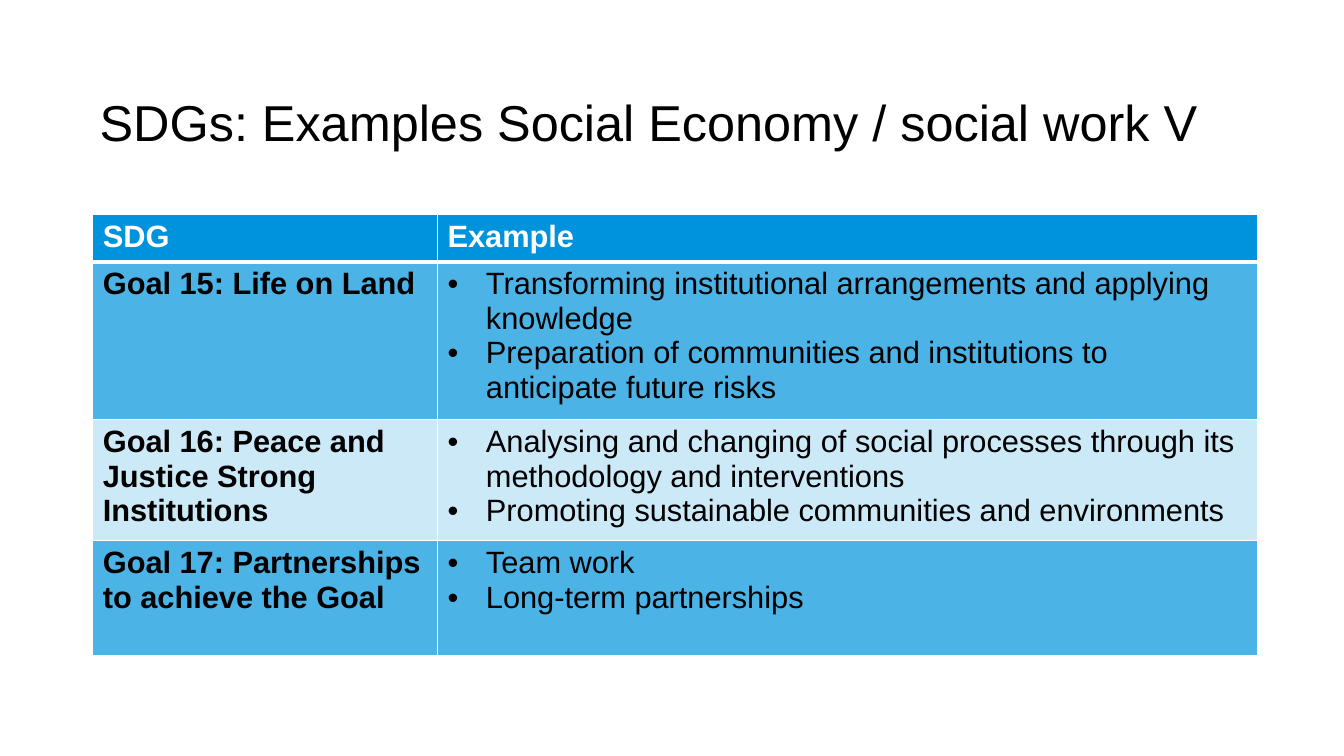
from lxml import etree
from pptx import Presentation
from pptx.dml.color import RGBColor
from pptx.enum import text as t
from pptx.oxml import ns
from pptx.util import Inches, Pt

BLACK = RGBColor(0x00, 0x00, 0x00)
WHITE = RGBColor(0xFF, 0xFF, 0xFF)
BLUE = RGBColor(0x00, 0x93, 0xDD)
FONT = "Arial"

TITLE = "SDGs: Examples Social Economy / social work V"
HEADINGS = ("SDG", "Example")
GOALS = [
    ("Goal 15: Life on Land",
     ["Transforming institutional arrangements and applying knowledge",
      "Preparation of communities and institutions to anticipate future risks"]),
    ("Goal 16: Peace and Justice Strong Institutions",
     ["Analysing and changing of social processes through its methodology and interventions",
      "Promoting sustainable communities and environments"]),
    ("Goal 17: Partnerships to achieve the Goal",
     ["Team work", "Long-term partnerships"]),
]
COLUMN_WIDTHS = (3.42, 8.13)
ROW_HEIGHTS = (0.46, 1.44, 1.14, 1.14)


def add_child(parent, tag, **attributes):
    return etree.SubElement(parent, ns.qn(tag), **attributes)


def write(frame, lines, size=22, color=BLACK, bold=False, bullet=False, spacing=None):
    for index, line in enumerate(lines):
        para = frame.paragraphs[0] if index == 0 else frame.add_paragraph()
        para.line_spacing = spacing
        if bullet:
            properties = para._p.get_or_add_pPr()
            properties.set("marL", str(Inches(0.38)))
            properties.set("indent", str(-Inches(0.38)))
            add_child(properties, "a:buFont", typeface=FONT)
            add_child(properties, "a:buChar", char="•")
        span = para.add_run()
        span.text = line
        span.font.name = FONT
        span.font.size = Pt(size)
        span.font.bold = bold
        span.font.color.rgb = color


def paint_cell(cell, opacity, top=1, bottom=1):
    cell.fill.solid()
    cell.fill.fore_color.rgb = BLUE
    properties = cell._tc.get_or_add_tcPr()
    if opacity < 100:
        color = properties.find(".//" + ns.qn("a:srgbClr"))
        add_child(color, "a:alpha", val=str(opacity * 1000))
    sides = (("a:lnL", 1), ("a:lnR", 1), ("a:lnT", top), ("a:lnB", bottom))
    for index, (tag, width) in enumerate(sides):
        border = add_child(properties, tag, w=str(Pt(width)))
        add_child(add_child(border, "a:solidFill"), "a:srgbClr", val=str(WHITE))
        properties.insert(index, border)


def add_title(page, left, top, width, height):
    box = page.shapes.add_textbox(Inches(left), Inches(top), Inches(width), Inches(height))
    frame = box.text_frame
    frame.word_wrap = True
    frame.vertical_anchor = t.MSO_ANCHOR.MIDDLE
    write(frame, [TITLE], size=36, spacing=0.9)


def add_goal_table(page, left, top):
    table = page.shapes.add_table(
        len(ROW_HEIGHTS), len(COLUMN_WIDTHS), Inches(left), Inches(top),
        Inches(sum(COLUMN_WIDTHS)), Inches(sum(ROW_HEIGHTS))).table
    for column, width in zip(table.columns, COLUMN_WIDTHS):
        column.width = Inches(width)
    for row, height in zip(table.rows, ROW_HEIGHTS):
        row.height = Inches(height)

    for cell, heading in zip(table.rows[0].cells, HEADINGS):
        write(cell.text_frame, [heading], color=WHITE, bold=True)
        paint_cell(cell, 100, bottom=3)
    for number, (goal, examples) in enumerate(GOALS, start=1):
        goal_cell, example_cell = table.rows[number].cells
        write(goal_cell.text_frame, [goal], bold=True)
        write(example_cell.text_frame, examples, bullet=True)
        for cell in (goal_cell, example_cell):
            paint_cell(cell, 70 if number % 2 else 20, top=3 if number == 1 else 1)


def main():
    deck = Presentation()
    deck.slide_width = Inches(13.33)
    deck.slide_height = Inches(7.5)
    page = deck.slides.add_slide(deck.slide_layouts[6])
    add_title(page, 0.89, 0.52, 11.52, 1.45)
    add_goal_table(page, 0.92, 2.13)
    deck.save("out.pptx")


if __name__ == "__main__":
    main()
